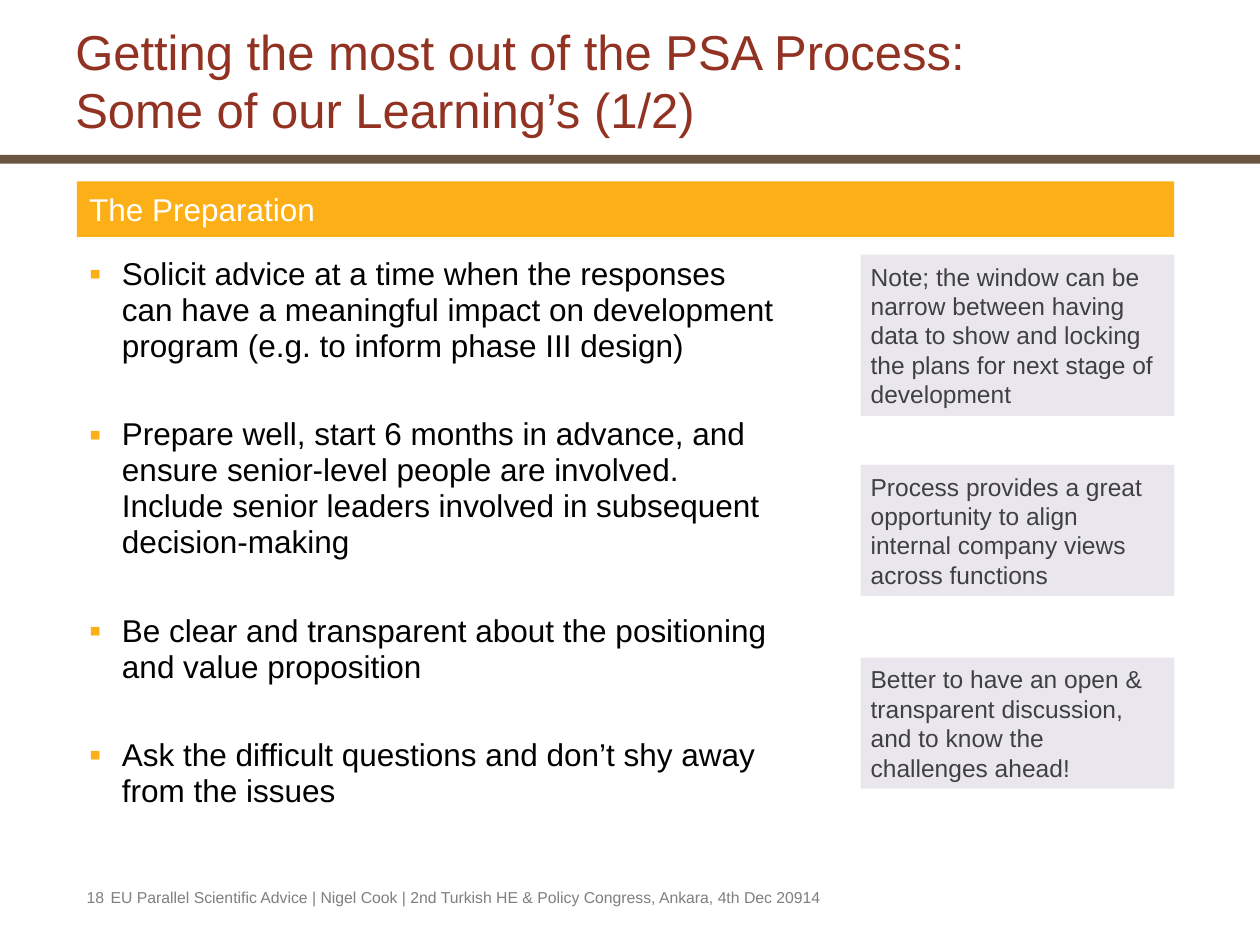
from lxml import etree
from pptx import Presentation
from pptx.dml.color import RGBColor
from pptx.enum.shapes import MSO_SHAPE as Shape
from pptx.enum.text import MSO_ANCHOR as Anchor, PP_ALIGN as Align
from pptx.oxml.ns import qn
from pptx.util import Inches, Pt

COLORS = {
    "title": "923222", "rule": "6A5540", "accent": "FCAF17", "white": "FFFFFF",
    "body": "000000", "note_fill": "E9E7ED", "note": "404040", "footer": "7F7F7F",
}
FONT = "Arial"
POINTS = [
    "Solicit advice at a time when the responses \vcan have a meaningful impact on "
    "development program (e.g. to inform phase III design)",
    "Prepare well, start 6 months in advance, and ensure senior-level people are involved. "
    "\vInclude senior leaders involved in subsequent decision-making",
    "Be clear and transparent about the positioning and value proposition",
    "Ask the difficult questions and don’t shy away from the issues",
]
NOTES = [
    (2.02, 1.28, "Note; the window can be narrow between having data to show and locking "
                 "the plans for next stage of development"),
    (3.69, 1.04, "Process provides a great opportunity to align internal company views "
                 "across functions"),
    (5.22, 1.04, "Better to have an open & transparent discussion, and to know the "
                 "challenges ahead!"),
]


def style(para, size, color):
    para.alignment = Align.LEFT
    for span in para.runs:
        span.font.size = Pt(size)
        span.font.name = FONT
        span.font.color.rgb = RGBColor.from_string(COLORS[color])


def add_text(page, left, top, width, height, text, size, color, anchor=Anchor.TOP):
    box = page.shapes.add_textbox(Inches(left), Inches(top), Inches(width), Inches(height))
    frame = box.text_frame
    frame.word_wrap = True
    frame.vertical_anchor = anchor
    frame.text = text
    for para in frame.paragraphs:
        style(para, size, color)
    return box


def add_panel(page, left, top, width, height, fill):
    panel = page.shapes.add_shape(
        Shape.RECTANGLE, Inches(left), Inches(top), Inches(width), Inches(height))
    panel.shadow.inherit = False
    panel.fill.solid()
    panel.fill.fore_color.rgb = RGBColor.from_string(COLORS[fill])
    panel.line.fill.background()
    return panel


def fill_panel(panel, text, size, color, inset=0.1):
    frame = panel.text_frame
    frame.word_wrap = True
    frame.vertical_anchor = Anchor.MIDDLE
    frame.margin_left = frame.margin_right = Inches(inset)
    frame.text = text
    style(frame.paragraphs[0], size, color)


def add_bullet(para):
    props = para._p.get_or_add_pPr()
    props.set("marL", str(Inches(0.26)))
    props.set("indent", str(-Inches(0.26)))
    bullet_color = etree.SubElement(props, qn("a:buClr"))
    etree.SubElement(bullet_color, qn("a:srgbClr"), val=COLORS["accent"])
    etree.SubElement(props, qn("a:buSzPct"), val="110000")
    etree.SubElement(props, qn("a:buFont"), typeface=FONT)
    etree.SubElement(props, qn("a:buChar"), char="▪")


def add_header(page, left, top, width, height):
    add_panel(page, 0, top + 0.89, 10, 0.07, "rule")
    add_text(page, left, top, width, height,
             "Getting the most out of the PSA Process:\vSome of our Learning’s (1/2)",
             28, "title", Anchor.BOTTOM)


def add_points(page, left, top, width, height):
    box = add_text(page, left, top, width, height, "\n".join(POINTS), 18, "body")
    for index, para in enumerate(box.text_frame.paragraphs):
        add_bullet(para)
        para.line_spacing = 0.95
        para.space_before = Pt(6 if index else 0)
        para.space_after = Pt(24)


def add_notes(page, left, width):
    for top, height, text in NOTES:
        fill_panel(add_panel(page, left, top, width, height, "note_fill"),
                   text, 14, "note", 0.08)


def add_footer(page, left, top, height):
    add_text(page, left, top, 0.44, height, "18", 9, "footer")
    add_text(page, left + 0.19, top, 7.05, height,
             "EU Parallel Scientific Advice | Nigel Cook | 2nd Turkish HE & Policy Congress, "
             "Ankara, 4th Dec 20914", 9, "footer")


def main():
    deck = Presentation()
    deck.slide_width, deck.slide_height = Inches(10), Inches(7.5)
    page = deck.slides.add_slide(deck.slide_layouts[6])
    add_header(page, 0.5, 0.34, 9, 0.81)
    fill_panel(add_panel(page, 0.61, 1.44, 8.71, 0.44, "accent"),
               "The Preparation", 18, "white")
    add_points(page, 0.61, 1.99, 5.81, 4.48)
    add_notes(page, 6.83, 2.49)
    add_footer(page, 0.59, 7, 0.27)
    deck.save("out.pptx")


if __name__ == "__main__":
    main()
